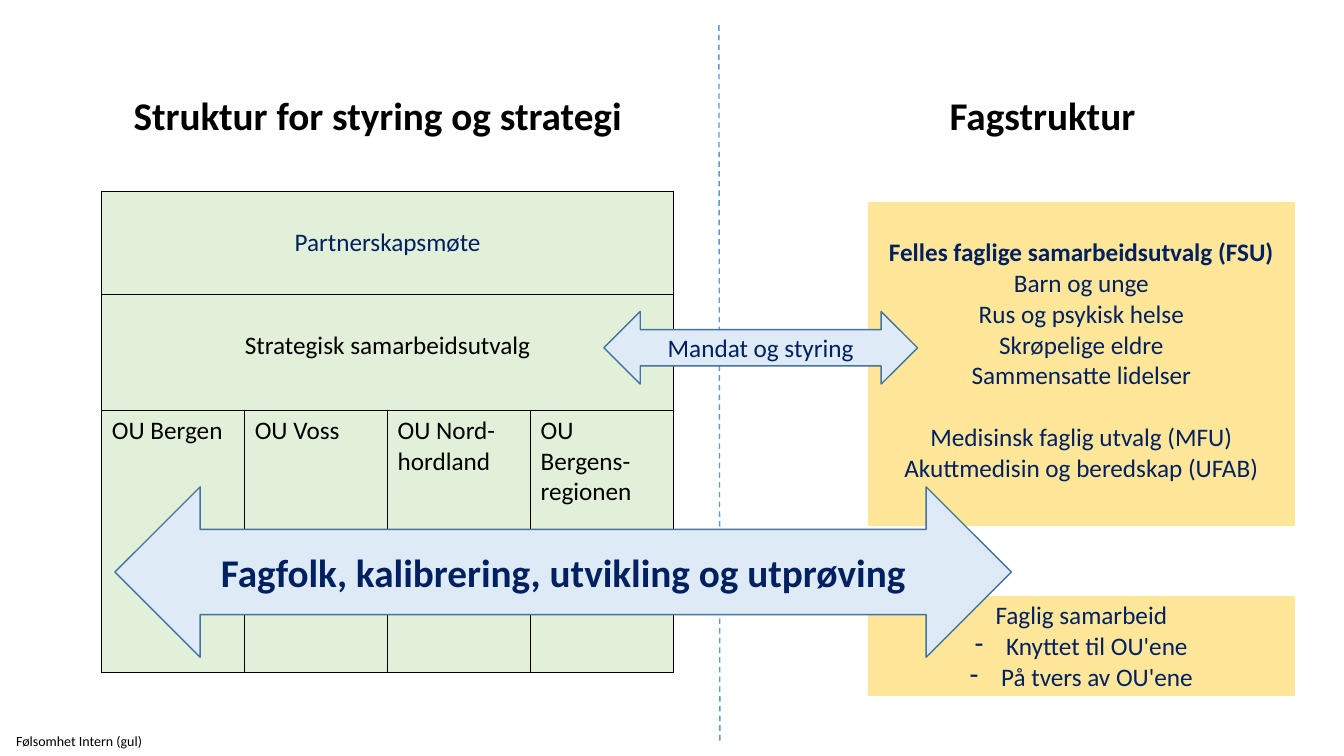
import pptx
import pptx.dml.color
import pptx.enum.dml
import pptx.enum.shapes
import pptx.enum.text
import pptx.oxml
import pptx.oxml.ns
import pptx.util

PX = 9144
FONT = "Calibri"
COLORS = {
    "black": "000000", "white": "FFFFFF", "navy": "002060", "green": "E2F0D9",
    "yellow": "FFE699", "pale": "DEEBF7", "edge": "43739E", "divider": "5B9BD5",
}
ALIGN = pptx.enum.text.PP_ALIGN
ANCHOR = pptx.enum.text.MSO_ANCHOR
SHAPE = pptx.enum.shapes.MSO_SHAPE

LABELS = [
    ("Følsomhet Intern (gul)", (0, 721, 158, 29), 10, False, ALIGN.LEFT, (16, 0)),
    ("Struktur for styring og strategi", (92, 40, 565, 147), 28, True, ALIGN.CENTER, (10, 5)),
    ("Fagstruktur", (932, 85, 390, 57), 28, True, ALIGN.LEFT, (10, 5)),
]
BODIES = [("Partnerskapsmøte", 102, "navy"), ("Strategisk samarbeidsutvalg", 115, "black")]
UNITS = ["OU Bergen", "OU Voss", "OU Nord-hordland", "OU Bergens-regionen"]
UNIT_HEIGHT = 260
GOVERNANCE_BOX = (101, 190, 567)
COMMITTEES = [
    "Felles faglige samarbeidsutvalg (FSU)", "Barn og unge", "Rus og psykisk helse",
    "Skrøpelige eldre", "Sammensatte lidelser", "Medisinsk faglig utvalg (MFU)",
    "Akuttmedisin og beredskap (UFAB)",
]
COOPERATION = ["Faglig samarbeid", "Knyttet til OU'ene", "På tvers av OU'ene"]
DIVIDER = (713, 25, 714, 738)
ARROWS = [
    ("Mandat og styring", (599, 309, 311, 72), 18, False),
    ("Fagfolk, kalibrering, utvikling og utprøving", (114, 483, 889, 169), 28, True),
]
LINE_GAP = 22
TOP_GAP = 36


def px(*values):
    return [pptx.util.Emu(v * PX) for v in values]


def rgb(name):
    return pptx.dml.color.RGBColor.from_string(COLORS[name])


def write(tf, lines, size, color, bold=False, align=ALIGN.CENTER):
    tf.word_wrap = True
    tf.text = "\n".join(lines)
    for p in tf.paragraphs:
        p.alignment = align
        for r in p.runs:
            r.font.name = FONT
            r.font.size = pptx.util.Pt(size)
            r.font.bold = bold
            r.font.color.rgb = rgb(color)
    return tf.paragraphs


def add_table(slide, left, top, widths, heights):
    frame = slide.shapes.add_table(
        len(heights), len(widths), *px(left, top, sum(widths), sum(heights)))
    table = frame.table
    table.first_row = table.horz_banding = False
    for column, width in zip(table.columns, widths):
        column.width = px(width)[0]
    for row, height in zip(table.rows, heights):
        row.height = px(height)[0]
    return table


def style_cells(table, fill, border, bottom):
    for cell in table.iter_cells():
        cell.fill.solid()
        cell.fill.fore_color.rgb = rgb(fill)
        tcPr = cell._tc.get_or_add_tcPr()
        for i, (side, width) in enumerate(zip("LRTB", (1, 1, 1, bottom))):
            tcPr.insert(i, pptx.oxml.parse_xml(
                f'<a:ln{side} {pptx.oxml.ns.nsdecls("a")} w="{pptx.util.Pt(width)}">'
                f'<a:solidFill><a:srgbClr val="{COLORS[border]}"/></a:solidFill></a:ln{side}>'))


def add_labels(slide):
    for text, box, size, bold, align, (inset_x, inset_y) in LABELS:
        tf = slide.shapes.add_textbox(*px(*box)).text_frame
        tf.margin_left, tf.margin_top = px(inset_x, inset_y)
        tf.margin_right, tf.margin_bottom = px(0 if size == 10 else inset_x, inset_y)
        tf.vertical_anchor = ANCHOR.MIDDLE
        write(tf, [text], size, "black", bold, align)


def add_governance(slide):
    left, top, width = GOVERNANCE_BOX
    count = len(UNITS)
    table = add_table(slide, left, top, [width / count] * count,
                      [height for _, height, _ in BODIES] + [UNIT_HEIGHT])
    style_cells(table, "green", "black", 1)
    for i, (text, _, color) in enumerate(BODIES):
        cell = table.cell(i, 0)
        cell.merge(table.cell(i, count - 1))
        cell.margin_top = px(TOP_GAP)[0]
        write(cell.text_frame, [text], 18, color)
    for j, text in enumerate(UNITS):
        write(table.cell(len(BODIES), j).text_frame, [text], 18, "black", align=ALIGN.LEFT)


def add_panel(slide, top, height, lines):
    table = add_table(slide, 860, top, [425], [height])
    style_cells(table, "yellow", "white", 3)
    cell = table.cell(0, 0)
    return cell, write(cell.text_frame, lines, 18, "navy")


def add_professional(slide):
    cell, paragraphs = add_panel(slide, 200, 324, COMMITTEES)
    cell.margin_top = px(TOP_GAP)[0]
    paragraphs[0].runs[0].font.bold = True
    paragraphs[5].space_before = pptx.util.Pt(LINE_GAP)
    _, paragraphs = add_panel(slide, 591, 101, COOPERATION)
    for p in paragraphs[1:]:
        pPr = p._p.get_or_add_pPr()
        pPr.set("marL", str(31 * PX))
        pPr.set("indent", str(-31 * PX))
        pPr.append(pptx.oxml.parse_xml(
            f'<a:buChar {pptx.oxml.ns.nsdecls("a")} char="-"/>'))


def add_divider(slide):
    line = slide.shapes.add_connector(
        pptx.enum.shapes.MSO_CONNECTOR.STRAIGHT, *px(*DIVIDER))
    line.line.color.rgb = rgb("divider")
    line.line.width = pptx.util.Pt(1)
    line.line.dash_style = pptx.enum.dml.MSO_LINE.DASH
    line._element.spPr.append(pptx.oxml.parse_xml(
        f'<a:effectLst {pptx.oxml.ns.nsdecls("a")}/>'))


def add_arrows(slide):
    for text, box, size, bold in ARROWS:
        sp = slide.shapes.add_shape(SHAPE.LEFT_RIGHT_ARROW, *px(*box))
        sp.shadow.inherit = False
        sp.fill.solid()
        sp.fill.fore_color.rgb = rgb("pale")
        sp.line.color.rgb = rgb("edge")
        sp.line.width = pptx.util.Pt(1)
        sp.text_frame.vertical_anchor = ANCHOR.MIDDLE
        write(sp.text_frame, [text], size, "navy", bold)


def main():
    prs = pptx.Presentation()
    prs.slide_width, prs.slide_height = px(1333, 750)
    slide = prs.slides.add_slide(prs.slide_layouts[6])
    add_labels(slide)
    add_governance(slide)
    add_professional(slide)
    add_divider(slide)
    add_arrows(slide)
    prs.save("out.pptx")


if __name__ == "__main__":
    main()
